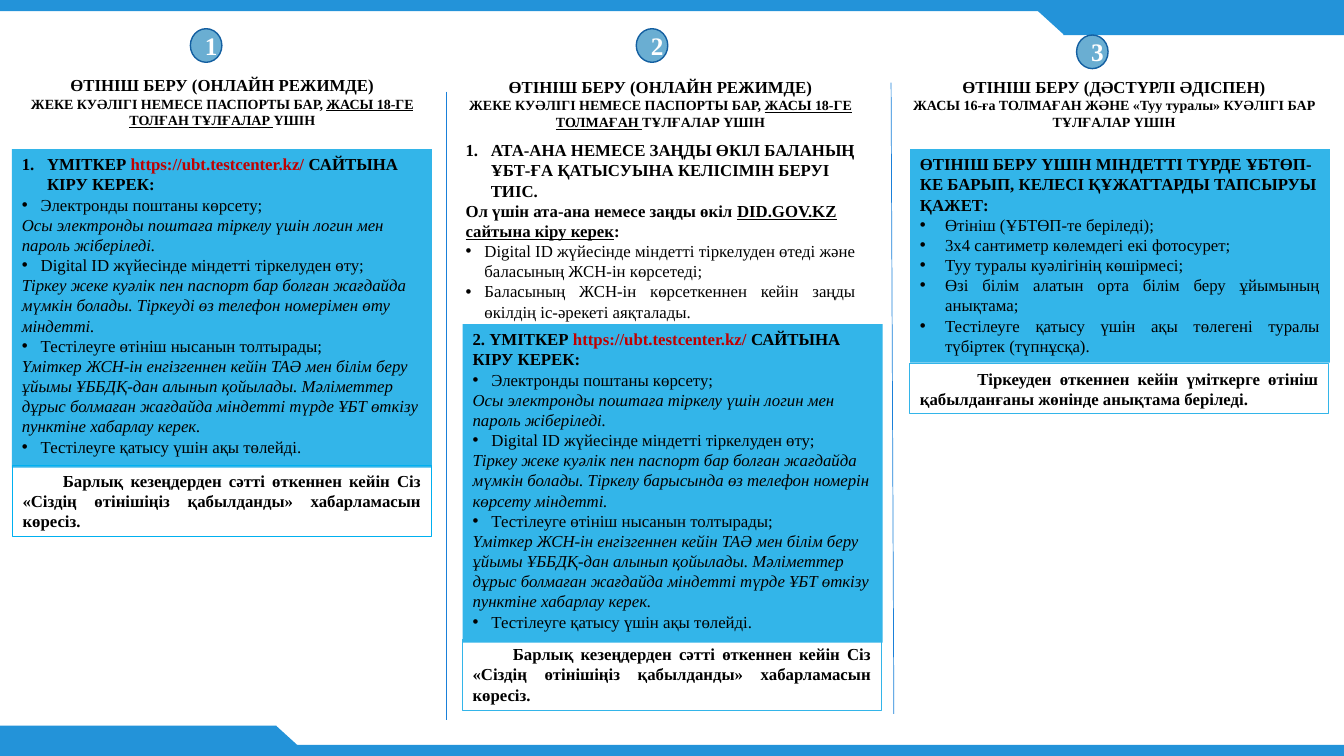
import pptx
import pptx.dml.color
import pptx.enum.shapes
import pptx.enum.text
import pptx.oxml
import pptx.oxml.ns
import pptx.util
from lxml import etree

Pt = pptx.util.Pt
SHAPES = pptx.enum.shapes.MSO_SHAPE
ALIGN = pptx.enum.text.PP_ALIGN
ANCHOR = pptx.enum.text.MSO_ANCHOR
RGBColor = pptx.dml.color.RGBColor

BAND = RGBColor(0x23, 0x93, 0xD9)
PANEL = RGBColor(0x33, 0xB5, 0xE9)
NOTE_LINE = RGBColor(0x00, 0xB0, 0xF0)
BADGE = RGBColor(0x6A, 0xAE, 0xD2)
BADGE_LINE = RGBColor(0x13, 0x5F, 0xA1)
DIVIDER = RGBColor(0x1A, 0x80, 0xD9)
RED = RGBColor(0xC0, 0x00, 0x00)
BLACK = RGBColor(0x00, 0x00, 0x00)
WHITE = RGBColor(0xFF, 0xFF, 0xFF)

SLIDE_WIDTH, SLIDE_HEIGHT = 960, 540
PLAIN = {"size": Pt(12)}
BOLD = {"size": Pt(12), "bold": True}
ITALIC = {"size": Pt(12), "italic": True}
LINK = {"size": Pt(12), "bold": True, "color": RED}
UNDERLINED = {"size": Pt(12), "bold": True, "underline": True}
SMALL = {"size": Pt(10), "bold": True}
SMALL_UNDERLINED = {"size": Pt(10), "bold": True, "underline": True}
NUMERAL = {"size": Pt(18), "bold": True, "color": WHITE}

LAYOUTS = {
    "plain": (0, 0, None),
    "number": (18, -18, ("a:buAutoNum", {"type": "arabicPeriod"})),
    "bullet": (13.5, -13.5, ("a:buChar", {"char": "•"})),
    "wide bullet": (18, -18, ("a:buChar", {"char": "•"})),
    "first line": (0, 28.8, None),
    "deep first line": (0, 41, None),
}


def entry(layout, *runs, align=ALIGN.LEFT):
    """Describe one paragraph as its layout, alignment and runs."""
    return layout, align, runs


def write_text(shape, entries, anchor=ANCHOR.TOP):
    """Fill a shape with the described paragraphs."""
    frame = shape.text_frame
    for name, value in {"word_wrap": True, "vertical_anchor": anchor}.items():
        setattr(frame, name, value)
    for index, (layout, align, runs) in enumerate(entries):
        paragraph = frame.add_paragraph() if index else frame.paragraphs[0]
        margin, indent, bullet = LAYOUTS[layout]
        properties = paragraph._p.get_or_add_pPr()
        properties.set("marL", str(int(Pt(margin))))
        properties.set("indent", str(int(Pt(indent))))
        if bullet:
            tag, attributes = bullet
            etree.SubElement(properties, pptx.oxml.ns.qn("a:buFont"), typeface="Arial" if tag == "a:buChar" else "+mj-lt")
            etree.SubElement(properties, pptx.oxml.ns.qn(tag), **attributes)
        paragraph.alignment = align
        for text, formats in runs:
            run = paragraph.add_run()
            run.text = text
            values = {"name": "Times New Roman", "bold": False, **formats}
            run.font.color.rgb = values.pop("color", BLACK)
            for name, value in values.items():
                setattr(run.font, name, value)


def add_box(slide, kind, box, fill=None, line=None, width=0.75):
    """Add a preset shape with the given fill and outline."""
    shape = slide.shapes.add_shape(kind, *map(Pt, box))
    shape.shadow.inherit = False
    if fill is None:
        shape.fill.background()
    else:
        shape.fill.solid()
        shape.fill.fore_color.rgb = fill
    if line is None:
        shape.line.fill.background()
    else:
        shape.line.color.rgb = line
        shape.line.width = Pt(width)
    return shape


def add_bands(slide):
    """Draw the top and bottom bands with their slanted tabs."""
    for top in (0, SLIDE_HEIGHT - 8):
        add_box(slide, SHAPES.RECTANGLE, (0, top, SLIDE_WIDTH, 8), BAND)
    for left, top, slant_left, slant_top, rotation in (
        (759.6, 3.6, 736, 3, 0),
        (-3, 518.4, 173.5, 518.4, 180),
    ):
        add_box(slide, SHAPES.RECTANGLE, (left, top, 200.4, 21.6), BAND)
        slant = add_box(slide, SHAPES.FLOWCHART_MERGE, (slant_left, slant_top, 47.5, 21.6), BAND)
        slant.rotation = rotation


def add_badge(slide, left, top, number):
    """Draw a numbered circle."""
    badge = add_box(slide, SHAPES.OVAL, (left, top, 22.5, 24), BADGE, BADGE_LINE, 1)
    write_text(badge, [entry("plain", (number, NUMERAL), align=ALIGN.CENTER)], ANCHOR.MIDDLE)


def add_heading(slide, left, top, title, *runs):
    """Write a column title above its smaller subtitle."""
    heading = slide.shapes.add_textbox(*map(Pt, (left, top, 314.6, 46)))
    write_text(heading, [
        entry("plain", (title, BOLD), align=ALIGN.CENTER),
        entry("plain", *runs, align=ALIGN.CENTER),
    ])


def add_panel(slide, box, fill, entries):
    """Draw a filled panel holding the steps."""
    write_text(add_box(slide, SHAPES.RECTANGLE, box, fill), entries)


def add_note(slide, box, text, layout="first line", fill=WHITE, line=PANEL):
    """Draw an outlined note with a justified bold sentence."""
    note = add_box(slide, SHAPES.RECTANGLE, box, fill, line)
    write_text(note, [entry(layout, (text, BOLD), align=ALIGN.JUSTIFY)])


def add_divider(slide, start, end):
    """Draw a thin line between columns."""
    line = slide.shapes.add_connector(pptx.enum.shapes.MSO_CONNECTOR.STRAIGHT, *map(Pt, start + end))
    line.line.color.rgb = DIVIDER
    line.line.width = Pt(0.5)
    etree.SubElement(line._element.spPr, pptx.oxml.ns.qn("a:effectLst"))


def site_steps(layout, prefix, phone_step):
    """List the steps on the testing site, shared by both online columns."""
    return [
        entry(layout, (prefix + "ҮМІТКЕР ", BOLD), ("https://ubt.testcenter.kz/ ", LINK), ("САЙТЫНА КІРУ КЕРЕК:", BOLD)),
        entry("bullet", ("Электронды поштаны көрсету;", PLAIN)),
        entry("plain", ("Осы электронды поштаға тіркелу үшін логин мен пароль жіберіледі.", ITALIC)),
        entry("bullet", ("Digital ID жүйесінде міндетті тіркелуден өту;", PLAIN)),
        entry("plain", ("Тіркеу жеке куәлік пен паспорт бар болған жағдайда мүмкін болады. " + phone_step, ITALIC)),
        entry("bullet", ("Тестілеуге өтініш нысанын толтырады;", PLAIN)),
        entry("plain", ("Үміткер ЖСН-ін енгізгеннен кейін ТАӘ мен білім беру ұйымы ҰББДҚ-дан алынып қойылады. "
                        "Мәліметтер дұрыс болмаған жағдайда міндетті түрде ҰБТ өткізу пунктіне хабарлау керек.", ITALIC)),
        entry("bullet", ("Тестілеуге қатысу үшін ақы төлейді.", PLAIN)),
    ]


ONLINE = "ӨТІНІШ БЕРУ (ОНЛАЙН РЕЖИМДЕ)"
ONLINE_SUBTITLE = "ЖЕКЕ КУӘЛІГІ НЕМЕСЕ ПАСПОРТЫ БАР, "
ACCEPTED = "Барлық кезеңдерден сәтті өткеннен кейін Сіз «Сіздің өтінішіңіз қабылданды» хабарламасын көресіз."


def add_adult_column(slide, left, top):
    """Build the online column for adults."""
    add_badge(slide, left + 127.5, top, "1")
    add_heading(slide, left - 7, top + 29.5, ONLINE, (ONLINE_SUBTITLE, SMALL),
                ("ЖАСЫ 18-ГЕ ТОЛҒАН ТҰЛҒАЛАР ", SMALL_UNDERLINED), ("ҮШІН", SMALL))
    add_panel(slide, (left, top + 86, 300, 227.5), PANEL,
              site_steps("number", "", "Тіркеуді өз телефон номерімен өту міндетті."))
    add_note(slide, (left + 0.5, top + 312, 299, 51), ACCEPTED, fill=None, line=NOTE_LINE)


def add_minor_column(slide, left, top):
    """Build the online column for minors."""
    add_note(slide, (left, top + 436, 299, 51), ACCEPTED)
    add_badge(slide, left + 124, top, "2")
    add_heading(slide, left - 16, top + 30.5, ONLINE, (ONLINE_SUBTITLE, SMALL),
                ("ЖАСЫ 18-ГЕ ТОЛМАҒАН ", SMALL_UNDERLINED), ("ТҰЛҒАЛАР ҮШІН", SMALL))
    add_panel(slide, (left - 5, top + 76, 293, 152.5), WHITE, [
        entry("number", ("АТА-АНА НЕМЕСЕ ЗАҢДЫ ӨКІЛ БАЛАНЫҢ ҰБТ-ҒА ҚАТЫСУЫНА КЕЛІСІМІН БЕРУІ ТИІС.", BOLD)),
        entry("plain", ("Ол үшін ата-ана немесе заңды өкіл ", BOLD),
              ("DID.GOV.KZ сайтына кіру керек", UNDERLINED), (":", BOLD)),
        entry("bullet", ("Digital ID жүйесінде міндетті тіркелуден өтеді және баласының ЖСН-ін көрсетеді;", PLAIN)),
        entry("bullet", ("Баласының ЖСН-ін көрсеткеннен кейін заңды өкілдің іс-әрекеті аяқталады.", PLAIN),
              align=ALIGN.JUSTIFY),
    ])
    add_panel(slide, (left, top + 211, 300, 227.5), PANEL,
              site_steps("plain", "2. ", "Тіркелу барысында өз телефон номерін көрсету міндетті."))


def add_traditional_column(slide, left, top):
    """Build the column for applying in person."""
    add_badge(slide, left + 119, top + 4.5, "3")
    add_heading(slide, left - 11.5, top + 30.5, "ӨТІНІШ БЕРУ (ДӘСТҮРЛІ ӘДІСПЕН)",
                ("ЖАСЫ 16-ға ТОЛМАҒАН ЖӘНЕ «Туу туралы» КУӘЛІГІ БАР ТҰЛҒАЛАР ҮШІН", SMALL))
    documents = [
        "Өтініш (ҰБТӨП-те беріледі);",
        "3х4 сантиметр көлемдегі екі фотосурет;",
        "Туу туралы куәлігінің көшірмесі;",
        "Өзі білім алатын орта білім беру ұйымының анықтама;",
        "Тестілеуге қатысу үшін ақы төлегені туралы түбіртек (түпнұсқа).",
    ]
    title = "ӨТІНІШ БЕРУ ҮШІН МІНДЕТТІ ТҮРДЕ ҰБТӨП-КЕ БАРЫП, КЕЛЕСІ ҚҰЖАТТАРДЫ ТАПСЫРУЫ ҚАЖЕТ:"
    add_panel(slide, (left, top + 86, 300, 152.5), PANEL, [entry("plain", (title, BOLD))] + [
        entry("wide bullet", (document, PLAIN), align=ALIGN.JUSTIFY) for document in documents])
    add_note(slide, (left, top + 239, 299, 36),
             "Тіркеуден өткеннен кейін үміткерге өтініш қабылданғаны жөнінде анықтама беріледі.", "deep first line")


def main():
    """Build and save the slide."""
    presentation = pptx.Presentation()
    presentation.slide_width, presentation.slide_height = Pt(SLIDE_WIDTH), Pt(SLIDE_HEIGHT)
    slide = presentation.slides.add_slide(presentation.slide_layouts[6])
    add_bands(slide)
    add_adult_column(slide, 8.5, 20.5)
    add_minor_column(slide, 330.5, 20.5)
    add_traditional_column(slide, 650, 20.5)
    add_divider(slide, (319, 65.5), (319, 514.5))
    add_divider(slide, (636.5, 59), (638.5, 510))
    presentation.save("out.pptx")


if __name__ == "__main__":
    main()
